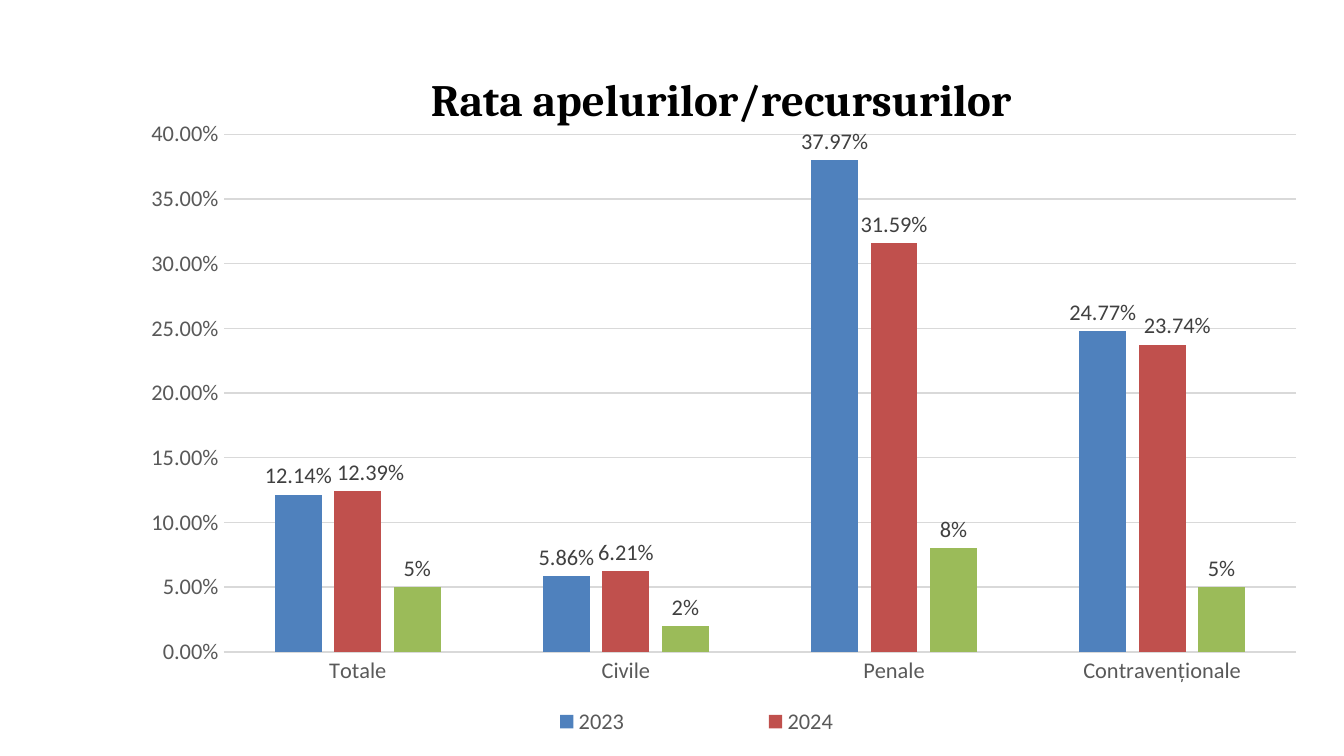
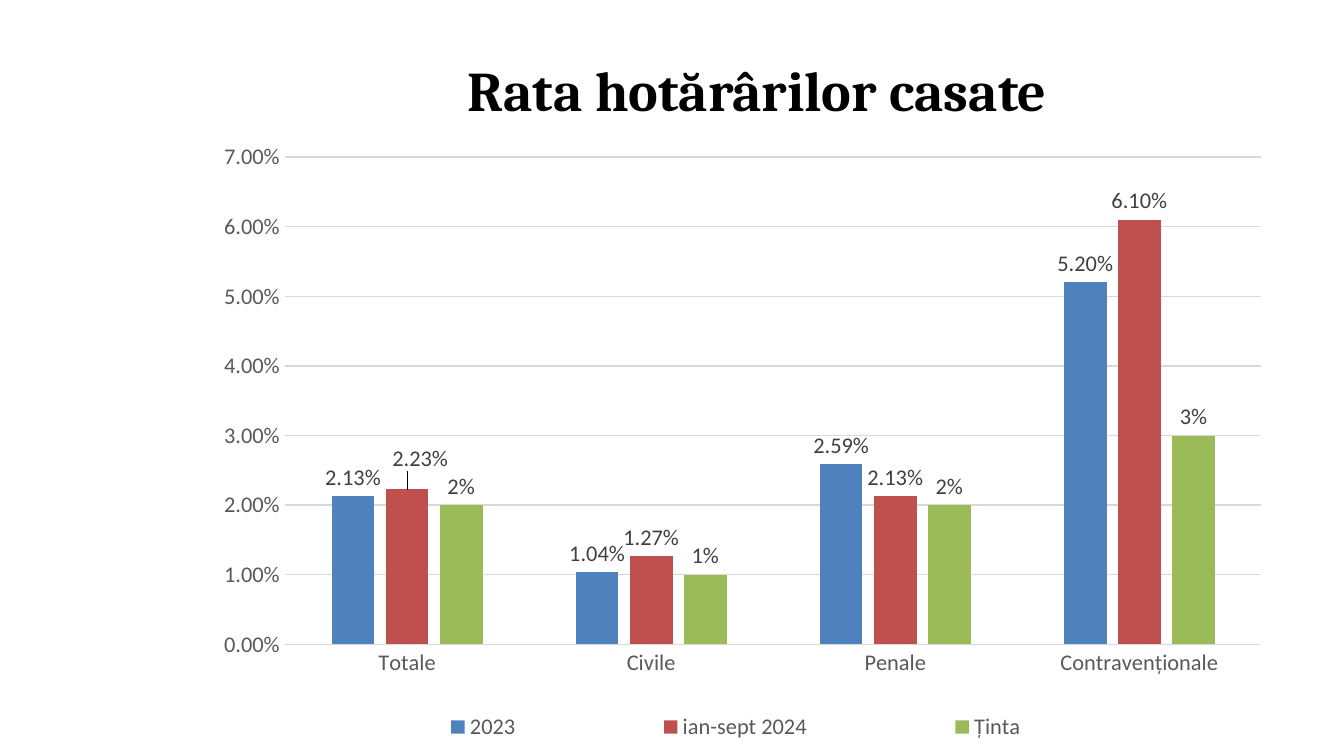
"""Builds two slides of court statistics, each with a clustered column chart."""
from lxml import etree
from pptx import Presentation
from pptx.chart.data import CategoryChartData
from pptx.dml.color import RGBColor
from pptx.enum import chart as charts, text
from pptx.oxml import ns
from pptx.util import Pt

BLACK = RGBColor(0x00, 0x00, 0x00)
LABEL_GRAY = RGBColor(0x40, 0x40, 0x40)
AXIS_GRAY = RGBColor(0x59, 0x59, 0x59)
GRID_GRAY = RGBColor(0xD9, 0xD9, 0xD9)
BLUE = RGBColor(0x4F, 0x81, 0xBD)
RED = RGBColor(0xC0, 0x50, 0x4D)
GREEN = RGBColor(0x9B, 0xBB, 0x59)
SERIES_COLORS = (BLUE, RED, GREEN)
FORMATS = ("0.00%", "0.00%", "0%")
CATEGORIES = ("Totale", "Civile", "Penale", "Contravenționale")


def style_font(font, size, color, name="Calibri", bold=False):
    font.size = Pt(size)
    font.name = name
    font.bold = bold
    font.color.rgb = color


def set_layout(parent, index, **values):
    for old in parent.findall(ns.qn("c:layout")):
        parent.remove(old)
    layout = etree.Element(ns.qn("c:layout"))
    manual = etree.SubElement(layout, ns.qn("c:manualLayout"))
    for tag, value in values.items():
        etree.SubElement(manual, ns.qn(f"c:{tag}")).set("val", str(value))
    parent.insert(index, layout)


EDGES = {"xMode": "edge", "yMode": "edge"}
SLIDES = (
    {
        "title": "Rata apelurilor/recursurilor",
        "title_in_chart": True,
        "frame": (70.56, 15.84, 624.24, 389.52),
        "plot": {"x": 0.079, "y": 0.144, "w": 0.921, "h": 0.712},
        "legend": {"x": 0.25, "y": 0.917, "w": 0.47, "h": 0.07},
        "hidden_entries": (2,),
        "scale": (0.4, 0.05),
        "series": {
            "2023": (0.1214, 0.0586, 0.3797, 0.2477),
            "2024": (0.1239, 0.0621, 0.3159, 0.2374),
            "Series 3": (0.05, 0.02, 0.08, 0.05),
        },
        "moved_labels": {0: (0.011, 0), 3: (0.013, 0)},
    },
    {
        "title": "Rata hotărârilor casate",
        "title_in_chart": False,
        "frame": (86.4, 75.6, 637.92, 329.76),
        "plot": {"x": 0.104, "y": 0.026, "w": 0.82, "h": 0.792},
        "legend": {"x": 0.125, "y": 0.912, "w": 0.715, "h": 0.08},
        "hidden_entries": (),
        "scale": (0.07, 0.01),
        "series": {
            "2023": (0.0213, 0.0104, 0.0259, 0.052),
            "ian-sept 2024": (0.0223, 0.0127, 0.0213, 0.061),
            "Ținta": (0.02, 0.01, 0.02, 0.03),
        },
        "moved_labels": {0: (0.011, -0.02)},
    },
)

prs = Presentation()
prs.slide_width = Pt(720)
prs.slide_height = Pt(405)

for content in SLIDES:
    slide = prs.slides.add_slide(prs.slide_layouts[6])
    data = CategoryChartData()
    data.categories = CATEGORIES
    for (name, values), number_format in zip(content["series"].items(), FORMATS):
        data.add_series(name, values, number_format)
    frame = [Pt(length) for length in content["frame"]]
    chart = slide.shapes.add_chart(
        charts.XL_CHART_TYPE.COLUMN_CLUSTERED, *frame, data).chart
    style_font(chart.font, 10, BLACK)

    chart.has_title = content["title_in_chart"]
    if content["title_in_chart"]:
        heading = chart.chart_title.text_frame
        heading.text = content["title"]
        style_font(heading.paragraphs[0].runs[0].font, 24, BLACK, "Cambria", True)
        set_layout(chart.chart_title._element, 1, **EDGES, x=0.25, y=0.045)
    else:
        heading_box = slide.shapes.add_textbox(
            Pt(147.6), Pt(31.68), Pt(516.24), Pt(32.4))
        heading = heading_box.text_frame
        heading.word_wrap = True
        heading.vertical_anchor = text.MSO_ANCHOR.MIDDLE
        heading.text = content["title"]
        heading.paragraphs[0].alignment = text.PP_ALIGN.CENTER
        style_font(heading.paragraphs[0].runs[0].font, 30, BLACK, "Cambria", True)

    for axis in (chart.category_axis, chart.value_axis):
        axis.major_tick_mark = charts.XL_TICK_MARK.NONE
        axis.minor_tick_mark = charts.XL_TICK_MARK.NONE
        style_font(axis.tick_labels.font, 12, AXIS_GRAY)
    percent_axis = chart.value_axis
    percent_axis.minimum_scale = 0
    percent_axis.maximum_scale, percent_axis.major_unit = content["scale"]
    percent_axis.tick_labels.number_format = "0.00%"
    percent_axis.tick_labels.number_format_is_linked = False
    percent_axis.format.line.fill.background()
    for line in (chart.category_axis.format.line,
                 percent_axis.major_gridlines.format.line):
        line.color.rgb = GRID_GRAY
        line.width = Pt(0.75)

    chart.has_legend = True
    chart.legend.position = charts.XL_LEGEND_POSITION.BOTTOM
    chart.legend.include_in_layout = False
    style_font(chart.legend.font, 12, AXIS_GRAY)
    legend = chart.legend._element
    set_layout(legend, 1, **EDGES, **content["legend"])
    for index in content["hidden_entries"]:
        entry = etree.Element(ns.qn("c:legendEntry"))
        etree.SubElement(entry, ns.qn("c:idx")).set("val", str(index))
        etree.SubElement(entry, ns.qn("c:delete")).set("val", "1")
        legend.insert(1, entry)

    columns = chart.plots[0]
    columns.gap_width = 219
    columns.overlap = -27
    columns.vary_by_categories = False
    plot_area = chart._chartSpace.chart.plotArea
    set_layout(plot_area, 0, layoutTarget="inner", **EDGES, **content["plot"])

    for series, color, number_format in zip(columns.series, SERIES_COLORS, FORMATS):
        series.format.fill.solid()
        series.format.fill.fore_color.rgb = color
        series.invert_if_negative = False
        labels = series.data_labels
        labels.show_value = True
        labels.position = charts.XL_LABEL_POSITION.OUTSIDE_END
        labels.number_format = number_format
        labels.number_format_is_linked = False
        style_font(labels.font, 12, LABEL_GRAY)

    current_year = columns.series[1]
    for index, (dx, dy) in content["moved_labels"].items():
        label = current_year.points[index].data_label
        style_font(label.font, 12, LABEL_GRAY)
        label.position = charts.XL_LABEL_POSITION.OUTSIDE_END
    moved = current_year._element.findall(".//" + ns.qn("c:dLbl"))
    for element, (dx, dy) in zip(moved, content["moved_labels"].values()):
        set_layout(element, 1, x=dx, y=dy)

prs.save("out.pptx")
